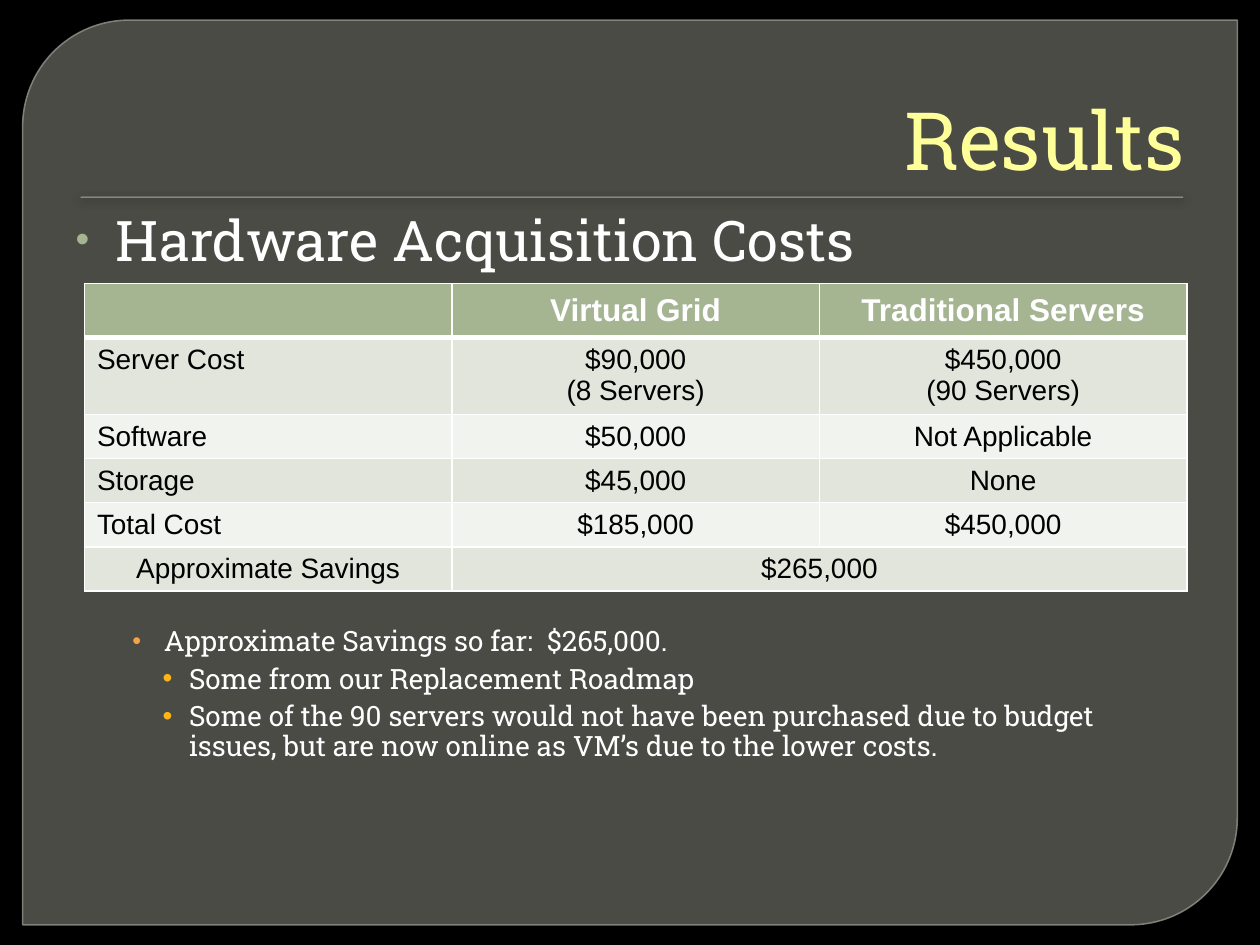
import pptx
import pptx.dml.color
import pptx.enum.shapes
import pptx.enum.text
import pptx.oxml
import pptx.oxml.ns
import pptx.util

Inches = pptx.util.Inches
Pt = pptx.util.Pt
RGBColor = pptx.dml.color.RGBColor
Shape = pptx.enum.shapes.MSO_SHAPE
Align = pptx.enum.text.PP_ALIGN
Anchor = pptx.enum.text.MSO_ANCHOR

BLACK = RGBColor(0x00, 0x00, 0x00)
WHITE = RGBColor(0xFF, 0xFF, 0xFF)
PANEL = RGBColor(0x72, 0x74, 0x6B)
EDGE = RGBColor(0x8A, 0x8C, 0x83)
YELLOW = RGBColor(0xFF, 0xFF, 0x9A)
SAGE = RGBColor(0xA5, 0xB5, 0x92)
ORANGE = RGBColor(0xF3, 0xA4, 0x47)
AMBER = RGBColor(0xFC, 0xB5, 0x14)
BANDS = RGBColor(0xE1, 0xE5, 0xDC), RGBColor(0xF0, 0xF3, 0xEE)

COSTS = [
    ["", "Virtual Grid", "Traditional Servers"],
    ["Server Cost", "$90,000\n(8 Servers)", "$450,000\n(90 Servers)"],
    ["Software", "$50,000", "Not Applicable"],
    ["Storage", "$45,000", "None"],
    ["Total Cost", "$185,000", "$450,000"],
    ["Approximate Savings", "$265,000", ""],
]
ROWS = [0.43, 0.61, 0.35, 0.35, 0.35, 0.35]

# text, level, size, space before, line spacing, left, hang, bullet colour, bullet %
POINTS = [
    ("Hardware Acquisition Costs", 0, 32, 0, 1, 0.32, 0.32, SAGE, 70),
    ("Approximate Savings so far:  $265,000.",
     1, 16, 203, 0.9, 0.7, 0.25, ORANGE, 90),
    ("Some from our Replacement Roadmap", 2, 16, 4, 0.9, 0.9, 0.21, AMBER, 100),
    ("Some of the 90 servers would not have been purchased due to budget "
     "issues, but are now online as VM’s due to the lower costs.",
     2, 16, 4, 0.9, 0.9, 0.21, AMBER, 100),
]


def node(xml):
    """Parse one element whose tag starts with the a: prefix."""
    tag, rest = xml[:xml.index(">")], xml[xml.index(">"):]
    end = "/" if tag.endswith("/") else ""
    names = pptx.oxml.ns.nsdecls("a")
    return pptx.oxml.parse_xml(f"{tag.rstrip('/')} {names}{end}{rest}")


def fade(fill, part):
    """Make a solid fill opaque to the given percentage."""
    color = fill._xPr.find(".//" + pptx.oxml.ns.qn("a:srgbClr"))
    color.append(node(f'<a:alpha val="{part * 1000}"/>'))


class Deck:
    face = "Roboto Slab"
    grid = "Arial"

    def __init__(self):
        self.prs = pptx.Presentation()
        self.prs.slide_width = Inches(10)
        self.prs.slide_height = Inches(7.5)
        self.slide = self.prs.slides.add_slide(self.prs.slide_layouts[1])
        back = self.slide.background.fill
        back.solid()
        back.fore_color.rgb = BLACK

    def font(self, para, size, color, face, bold=False):
        font = para.font
        font.size, font.name, font.bold = Pt(size), face, bold
        font.color.rgb = color

    def place(self, shape, box):
        shape.left, shape.top, shape.width, shape.height = map(Inches, box)

    def shape(self, kind, box, color, depth):
        """Add a plain shape at a depth counted from the back."""
        shape = self.slide.shapes.add_shape(kind, *map(Inches, box))
        shape.shadow.inherit = False
        shape.fill.solid()
        shape.fill.fore_color.rgb = color
        shape.line.fill.background()
        self.slide.shapes._spTree.insert(2 + depth, shape._element)
        return shape

    def panel(self, box):
        panel = self.shape(Shape.ROUND_2_DIAG_RECTANGLE, box, PANEL, 0)
        panel.adjustments[0] = 0.118
        panel.adjustments[1] = 0
        fade(panel.fill, 65)
        panel.line.color.rgb = EDGE
        panel.line.width = Pt(0.87)
        fade(panel.line.fill, 88)

    def rule(self, box):
        rule = self.shape(Shape.RECTANGLE, box, SAGE, 1)
        effect = rule._element.spPr.find(pptx.oxml.ns.qn("a:effectLst"))
        effect.append(node(
            f'<a:outerShdw blurRad="{Pt(5)}" dist="{Pt(1)}" dir="5400000">'
            '<a:srgbClr val="000000"><a:alpha val="75000"/></a:srgbClr>'
            '</a:outerShdw>'))

    def title(self, text, box):
        title = self.slide.shapes.title
        self.place(title, box)
        frame = title.text_frame
        frame.text = text
        frame.auto_size = pptx.enum.text.MSO_AUTO_SIZE.NONE
        frame.vertical_anchor = Anchor.BOTTOM
        para = frame.paragraphs[0]
        para.alignment = Align.RIGHT
        self.font(para, 46, YELLOW, self.face)

    def list(self, points, box):
        body = self.slide.placeholders[1]
        self.place(body, box)
        frame = body.text_frame
        frame.text = "\n".join(point[0] for point in points)
        frame.auto_size = pptx.enum.text.MSO_AUTO_SIZE.NONE
        for para, point in zip(frame.paragraphs, points):
            _, level, size, gap, lead, left, hang, color, part = point
            para.level = level
            para.space_before = Pt(gap)
            para.line_spacing = lead
            props = para._p.get_or_add_pPr()
            props.set("marL", str(Inches(left)))
            props.set("indent", str(-Inches(hang)))
            for xml in (f'<a:buClr><a:srgbClr val="{color}"/></a:buClr>',
                        f'<a:buSzPct val="{part * 1000}"/>',
                        '<a:buFont typeface="Arial"/>',
                        '<a:buChar char="•"/>'):
                props.append(node(xml))
            self.font(para, size, WHITE, self.face)

    def border(self, cell, row):
        props = cell._tc.get_or_add_tcPr()
        heavy = {0: "B", 1: "T"}.get(row)
        for side in "LRTB":
            width = Pt(3 if side == heavy else 1)
            props.append(node(
                f'<a:ln{side} w="{width}"><a:solidFill>'
                f'<a:srgbClr val="{WHITE}"/></a:solidFill></a:ln{side}>'))

    def table(self, data, rows, box):
        table = self.slide.shapes.add_table(
            len(data), len(data[0]), *map(Inches, box)).table
        last = len(data) - 1
        for row, high in enumerate(rows):
            table.rows[row].height = Inches(high)
            for col, text in enumerate(data[row]):
                cell = table.cell(row, col)
                self.border(cell, row)
                cell.fill.solid()
                cell.fill.fore_color.rgb = BANDS[(row - 1) % 2] if row else SAGE
                cell.text = text
                if row == 0 or (row == last and col):
                    cell.vertical_anchor = Anchor.MIDDLE
                for para in cell.text_frame.paragraphs:
                    if col or row == last:
                        para.alignment = Align.CENTER
                    if row:
                        self.font(para, 16, BLACK, self.grid)
                    else:
                        self.font(para, 18, WHITE, self.grid, True)
        table.cell(last, 1).merge(table.cell(last, 2))


def main():
    deck = Deck()
    deck.panel((0.18, 0.16, 9.64, 7.18))
    deck.rule((0.64, 1.56, 8.75, 0.01))
    deck.title("Results", (0.5, 0.28, 9, 1.25))
    deck.list(POINTS, (0.5, 1.58, 9, 5))
    deck.table(COSTS, ROWS, (0.67, 2.25, 8.75, sum(ROWS)))
    deck.prs.save("out.pptx")


if __name__ == "__main__":
    main()
